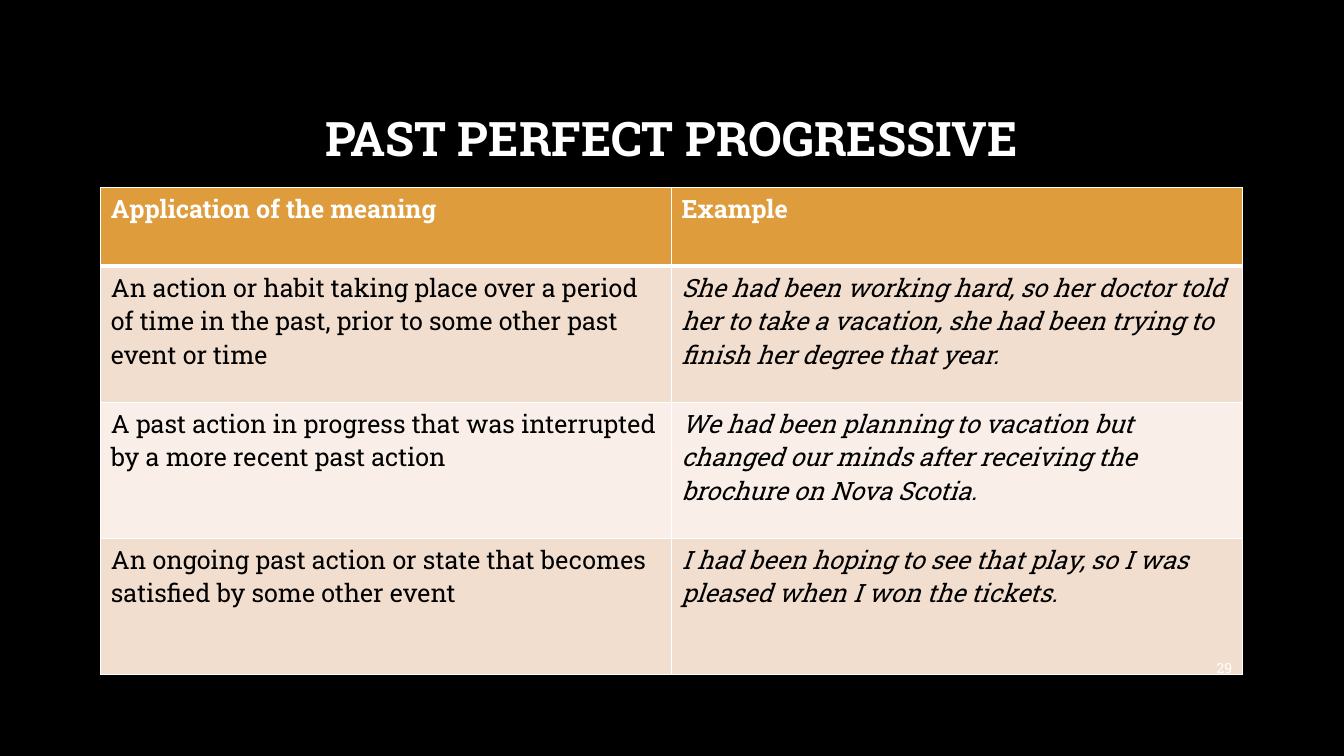
from lxml.etree import SubElement
from pptx import Presentation
from pptx.dml.color import RGBColor
from pptx.enum.text import MSO_ANCHOR, PP_ALIGN
from pptx.oxml.ns import qn
from pptx.util import Inches, Pt

# Content
TITLE = "PAST PERFECT PROGRESSIVE"
PAGE_NUMBER = "29"
ROWS = [
    ("Application of the meaning", "Example"),
    ("An action or habit taking place over a period of time in the past, "
     "prior to some other past event or time",
     "She had been working hard, so her doctor told her to take a vacation, "
     "she had been trying to finish her degree that year."),
    ("A past action in progress that was interrupted by a more recent past action",
     "We had been planning to vacation but changed our minds after receiving "
     "the brochure on Nova Scotia."),
    ("An ongoing past action or state that becomes satisfied by some other event",
     "I had been hoping to see that play, so I was pleased when I won the tickets."),
]

# Layout and colours
FONT = "Roboto Slab"
WHITE, BLACK = "FFFFFF", "000000"
HEADER_FILL, BAND_FILLS = "DE9C3C", ("F9EFE8", "F2DECE")
LEFT, CONTENT_WIDTH, TABLE_TOP = 1, 11.32, 1.86
HEADER_HEIGHT, BODY_HEIGHT = 0.78, 1.35
THIN, THICK = 1, 3


def color(hex_string):
    return RGBColor.from_string(hex_string)


def write(frame, text, size=18, fill=WHITE, bold=False, italic=False, align=PP_ALIGN.LEFT):
    paragraph = frame.paragraphs[0]
    paragraph.alignment = align
    run = paragraph.add_run()
    run.text = text
    font = run.font
    font.name, font.size, font.bold, font.italic = FONT, Pt(size), bold, italic
    font.color.rgb = color(fill)
    return paragraph


def add_borders(cell, **widths):
    properties = cell._tc.get_or_add_tcPr()
    for side in "LRTB":
        line = SubElement(properties, qn(f"a:ln{side}"), w=str(Pt(widths.get(side, THIN))))
        SubElement(SubElement(line, qn("a:solidFill")), qn("a:srgbClr"), val=WHITE)


presentation = Presentation()
presentation.slide_width, presentation.slide_height = Inches(13.33), Inches(7.5)
slide = presentation.slides.add_slide(presentation.slide_layouts[5])
slide.background.fill.solid()
slide.background.fill.fore_color.rgb = color(BLACK)

# Title
title = slide.shapes.title
title.left, title.top = Inches(LEFT), Inches(0.67)
title.width, title.height = Inches(CONTENT_WIDTH), Inches(1.45)
title.text_frame.vertical_anchor = MSO_ANCHOR.MIDDLE
heading = write(title.text_frame, TITLE, size=34, bold=True, align=PP_ALIGN.CENTER)
heading.line_spacing = 0.9

# Table of meanings and examples
table_height = HEADER_HEIGHT + BODY_HEIGHT * (len(ROWS) - 1)
table = slide.shapes.add_table(len(ROWS), 2, Inches(LEFT), Inches(TABLE_TOP),
                               Inches(CONTENT_WIDTH), Inches(table_height)).table
for row_index, texts in enumerate(ROWS):
    header = row_index == 0
    table.rows[row_index].height = Inches(HEADER_HEIGHT if header else BODY_HEIGHT)
    for column_index, text in enumerate(texts):
        cell = table.cell(row_index, column_index)
        add_borders(cell, T=THICK if row_index == 1 else THIN, B=THICK if header else THIN)
        cell.fill.solid()
        cell.fill.fore_color.rgb = color(HEADER_FILL if header else BAND_FILLS[row_index % 2])
        write(cell.text_frame, text, fill=WHITE if header else BLACK, bold=header,
              italic=not header and column_index == 1)

# Page number
number_width = 0.82
number_box = slide.shapes.add_textbox(Inches(LEFT + CONTENT_WIDTH - number_width), Inches(6.43),
                                      Inches(number_width), Inches(0.4))
number_box.text_frame.word_wrap = True
number_box.text_frame.vertical_anchor = MSO_ANCHOR.MIDDLE
write(number_box.text_frame, PAGE_NUMBER, size=10, align=PP_ALIGN.RIGHT)

presentation.save("out.pptx")
